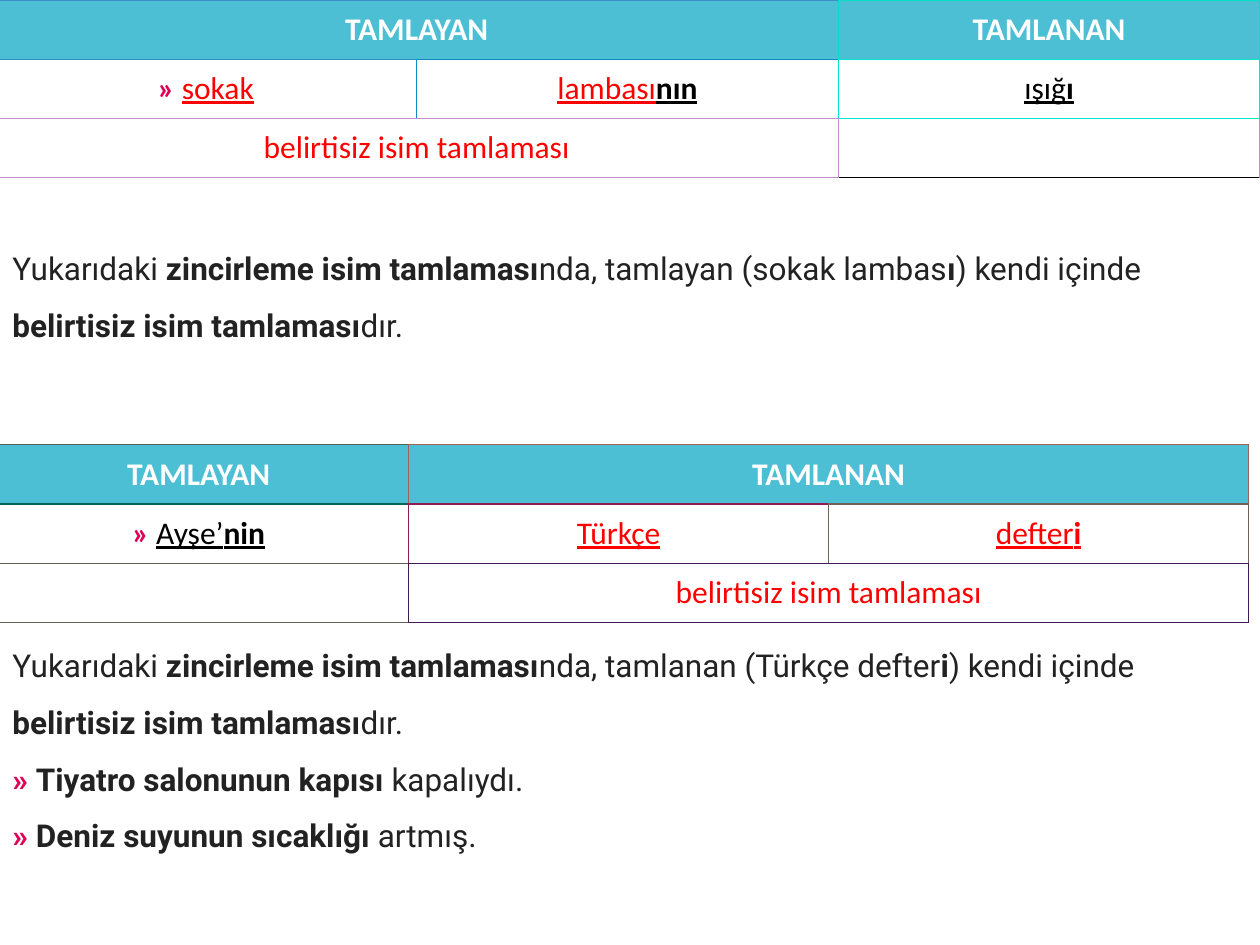
from lxml.etree import SubElement
from pptx import Presentation
from pptx.dml.color import RGBColor
from pptx.enum.text import MSO_ANCHOR as Anchor, PP_ALIGN as Align
from pptx.oxml.ns import qn
from pptx.util import Inches, Pt

COLORS = {
    "white": "FFFFFF", "black": "000000", "red": "FF0000", "pink": "DD0055",
    "gray": "222222", "header": "4DBFD5",
}
ROW_HEIGHT = 0.47
CELL_MARGIN = 0.08
PHRASE = "belirtisiz isim tamlaması"

# A run is (text, style words); b is bold, u is underlined.
# A cell is (first column, columns covered, runs, left/top/right/bottom colours).
LAMP_ROWS = [
    [(0, 2, [("TAMLAYAN", "white b")], "408EC8 408EC8 00E0C8 308FC8"),
     (2, 1, [("TAMLANAN", "white b")], "00E0C8 00E0C8 00E0C8 00E6C8")],
    [(0, 1, [("» ", "pink b"), ("sokak", "red u")], "308FC8 308FC8 108BC8 C08FC8"),
     (1, 1, [("lambası", "red u"), ("nın", "black b u")], "108BC8 108BC8 00E6C8 C08FC8"),
     (2, 1, [("ışığ", "black u"), ("ı", "black b u")], "00E6C8 00E6C8 00E6C8 00E6C8")],
    [(0, 2, [(PHRASE, "red")], "C08FC8 C08FC8 C08FC8 C08FC8"),
     (2, 1, [], "C08FC8 00E6C8 C08FC8 000000")],
]
NOTEBOOK_ROWS = [
    [(0, 1, [("TAMLAYAN", "white b")], "506454 506454 A06254 006354"),
     (1, 2, [("TAMLANAN", "white b")], "A06254 A06254 A06254 901C54")],
    [(0, 1, [("» ", "pink b"), ("Ayşe’", "black u"), ("nin", "black b u")],
      "006354 006354 901C54 606054"),
     (1, 1, [("Türkçe", "red u")], "901C54 901C54 706254 401B54"),
     (2, 1, [("defter", "red u"), ("i", "red b u")], "706254 706254 706254 401B54")],
    [(0, 1, [], "606054 606054 401B54 606054"),
     (1, 2, [(PHRASE, "red")], "401B54 401B54 401B54 401B54")],
]
TABLES = [(-0.04, 0, 10.04, LAMP_ROWS), (-0.09, 3.53, 10, NOTEBOOK_ROWS)]


def explanation(part, example, ending):
    return [
        ("Yukarıdaki ", "gray"), ("zincirleme isim tamlaması", "gray b"),
        (f"nda, {part} ({example}", "gray"), (ending, "gray b"),
        (") kendi içinde ", "gray"), (PHRASE, "gray b"), ("dır.", "gray"),
    ]


TEXTS = [
    (1.78, 10, 1.31, [explanation("tamlayan", "sokak lambas", "ı")]),
    (4.93, 9.91, 1.86, [
        explanation("tamlanan", "Türkçe defter", "i"),
        [("» ", "pink b"), ("Tiyatro salonunun kapısı", "gray b"), (" kapalıydı.", "gray")],
        [("» ", "pink b"), ("Deniz suyunun sıcaklığı", "gray b"), (" artmış.", "gray")],
    ]),
]


def write_runs(para, runs, font_name):
    para.font.name = font_name
    para.font.size = Pt(18)
    for text, style in runs:
        color, *marks = style.split()
        span = para.add_run()
        span.text = text
        span.font.name = font_name
        span.font.size = Pt(18)
        span.font.bold = "b" in marks
        span.font.underline = "u" in marks
        span.font.color.rgb = RGBColor.from_string(COLORS[color])


def set_borders(cell, colors):
    """Draw thin left, top, right and bottom lines; call before setting the fill."""
    properties = cell._tc.get_or_add_tcPr()
    for side, color in zip(("lnL", "lnT", "lnR", "lnB"), colors.split()):
        line = SubElement(properties, qn(f"a:{side}"), w=str(Pt(0.75)))
        fill = SubElement(line, qn("a:solidFill"))
        SubElement(fill, qn("a:srgbClr"), val=color)


def add_grid(page, left, top, width, rows):
    frame = page.shapes.add_table(len(rows), 3, Inches(left), Inches(top),
                                  Inches(width), Inches(ROW_HEIGHT * len(rows)))
    table = frame.table
    table.first_row = table.horz_banding = False
    for row_index, cells in enumerate(rows):
        table.rows[row_index].height = Inches(ROW_HEIGHT)
        for column, covered, runs, colors in cells:
            last = column + covered - 1
            for index in range(column, last + 1):
                cell = table.cell(row_index, index)
                set_borders(cell, colors)
                if row_index == 0:
                    cell.fill.solid()
                    cell.fill.fore_color.rgb = RGBColor.from_string(COLORS["header"])
                else:
                    cell.fill.background()
            cell = table.cell(row_index, column)
            if covered > 1:
                cell.merge(table.cell(row_index, last))
            cell.vertical_anchor = Anchor.MIDDLE
            cell.margin_left = cell.margin_right = Inches(CELL_MARGIN)
            cell.margin_top = cell.margin_bottom = Inches(CELL_MARGIN)
            para = cell.text_frame.paragraphs[0]
            para.alignment = Align.CENTER
            write_runs(para, runs, "Calibri")


def add_text(page, top, width, height, paragraphs):
    box = page.shapes.add_textbox(0, Inches(top), Inches(width), Inches(height))
    frame = box.text_frame
    frame.word_wrap = True
    for index, runs in enumerate(paragraphs):
        para = frame.add_paragraph() if index else frame.paragraphs[0]
        para.line_spacing = 1.5
        write_runs(para, runs, "Roboto")


def main():
    deck = Presentation()
    deck.slide_width, deck.slide_height = Inches(10), Inches(7.5)
    page = deck.slides.add_slide(deck.slide_layouts[6])
    for grid in TABLES:
        add_grid(page, *grid)
    for text in TEXTS:
        add_text(page, *text)
    deck.save("out.pptx")


if __name__ == "__main__":
    main()
